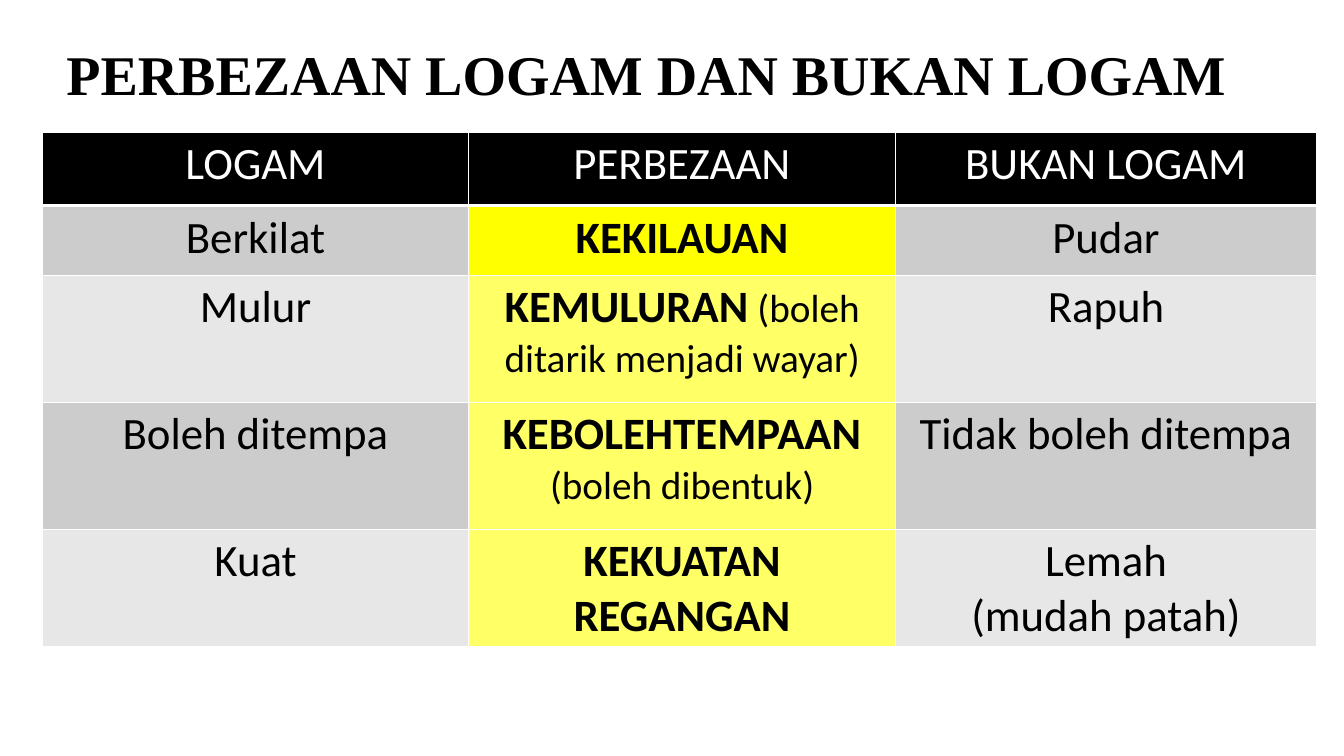
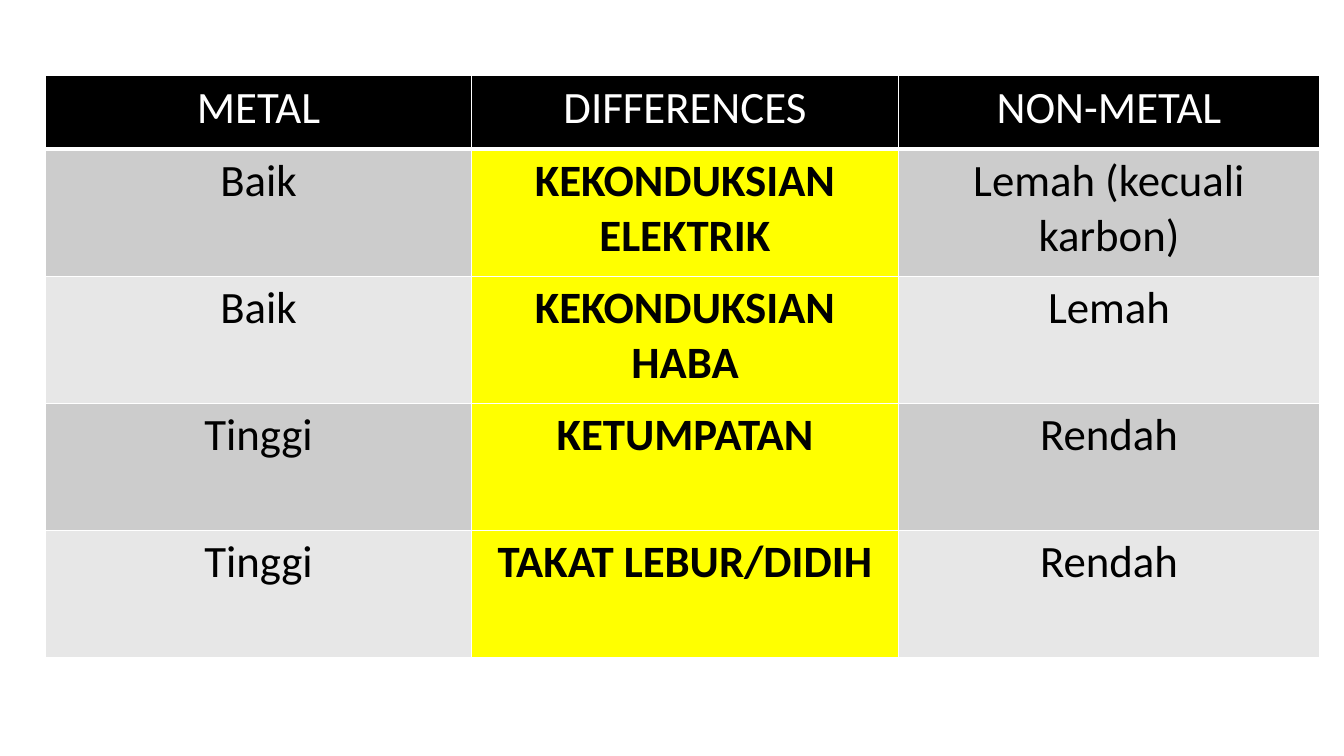
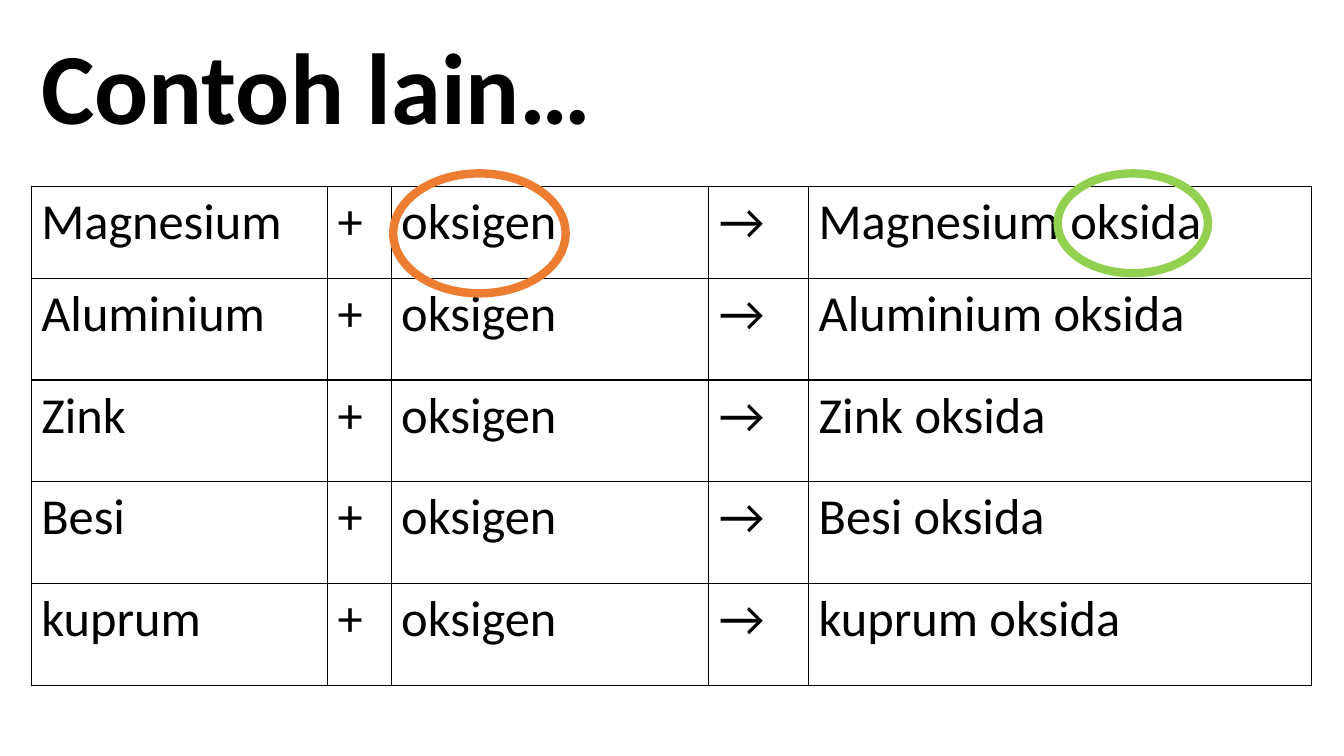
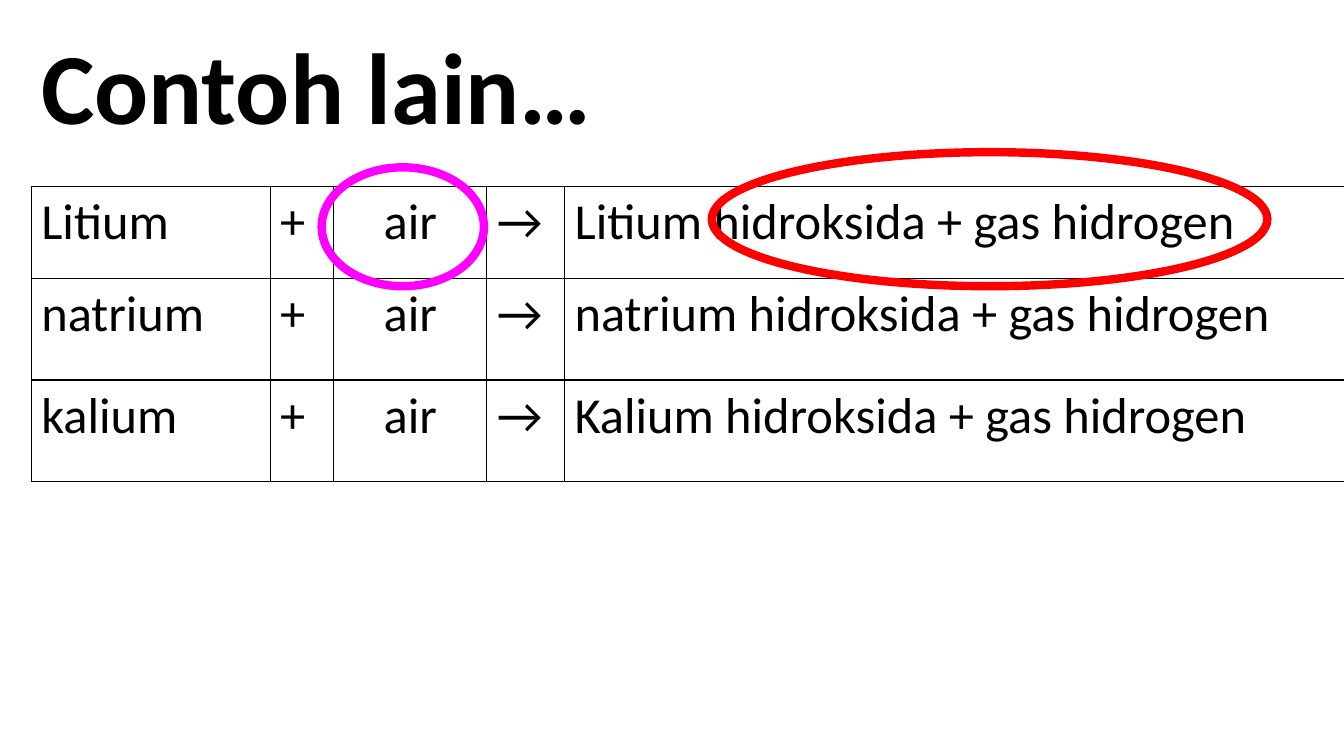
from dataclasses import dataclass

from lxml.etree import SubElement
from pptx import Presentation
from pptx.dml.color import RGBColor
from pptx.enum.shapes import MSO_SHAPE
from pptx.enum.text import MSO_AUTO_SIZE, PP_ALIGN
from pptx.oxml.ns import qn
from pptx.util import Inches, Pt


@dataclass(frozen=True)
class Theme:
    body_font: str = "Calibri"
    heading_font: str = "Times New Roman"
    black: str = "000000"
    white: str = "FFFFFF"
    bands: tuple = ("CCCCCC", "E7E7E7")
    yellow: str = "FFFF00"
    pale_yellow: str = "FFFF66"
    orange: str = "ED7D31"
    green: str = "92D050"
    red: str = "FF0000"
    magenta: str = "FF00FF"
    heading_size: int = 40
    example_title_size: int = 72
    comparison_size: int = 32
    note_size: int = 28
    equation_size: int = 36
    border_width: int = 1
    header_rule_width: int = 3
    ring_width: int = 6


class Deck:
    def __init__(self, theme):
        self.theme = theme
        self.presentation = Presentation()
        self.presentation.slide_width = Inches(13.33)
        self.presentation.slide_height = Inches(7.5)
        self.slide = None

    def new_slide(self):
        self.slide = self.presentation.slides.add_slide(self.presentation.slide_layouts[6])

    def format_run(self, run, size, color, bold=False, font=None):
        run.font.name = font or self.theme.body_font
        run.font.size = Pt(size)
        run.font.bold = bold
        run.font.color.rgb = RGBColor.from_string(color)

    def title(self, text, position, size, font=None):
        shape = self.slide.shapes.add_textbox(*map(Inches, position))
        text_frame = shape.text_frame
        text_frame.text = text
        text_frame.word_wrap = False
        text_frame.auto_size = MSO_AUTO_SIZE.SHAPE_TO_FIT_TEXT
        self.format_run(text_frame.paragraphs[0].runs[0], size, self.theme.black, True, font)

    def table(self, left, top, widths, heights):
        frame = self.slide.shapes.add_table(
            len(heights), len(widths), Inches(left), Inches(top),
            Inches(sum(widths)), Inches(sum(heights)))
        table = frame.table
        table.first_row = False
        table.horz_banding = False
        for column, width in zip(table.columns, widths):
            column.width = Inches(width)
        for row, height in zip(table.rows, heights):
            row.height = Inches(height)
        return table

    def cell(self, cell, text, size, color, border, fill=None, bold=False,
             alignment=PP_ALIGN.LEFT, bottom_width=None):
        properties = cell._tc.get_or_add_tcPr()
        for side in ("lnL", "lnR", "lnT", "lnB"):
            width = bottom_width if side == "lnB" and bottom_width else self.theme.border_width
            line = SubElement(properties, qn(f"a:{side}"), w=str(Pt(width)))
            SubElement(SubElement(line, qn("a:solidFill")), qn("a:srgbClr"), val=border)
        if fill:
            cell.fill.solid()
            cell.fill.fore_color.rgb = RGBColor.from_string(fill)
        else:
            cell.fill.background()
        cell.text_frame.text = text
        for paragraph in cell.text_frame.paragraphs:
            paragraph.alignment = alignment
            for run in paragraph.runs:
                self.format_run(run, size, color, bold)

    def comparison(self, left, top, heights, header, rows, key_fills):
        theme = self.theme
        table = self.table(left, top, (4.23, 4.23, 4.18), heights)
        shared = dict(size=theme.comparison_size, border=theme.white, alignment=PP_ALIGN.CENTER)
        for column, text in enumerate(header):
            self.cell(table.cell(0, column), text, color=theme.white, fill=theme.black,
                      bottom_width=theme.header_rule_width, **shared)
        for index, (metal, key, non_metal, *note) in enumerate(rows):
            band = theme.bands[index % 2]
            fills = (band, key_fills[index], band)
            for column, text in enumerate((metal, key, non_metal)):
                self.cell(table.cell(index + 1, column), text, color=theme.black,
                          fill=fills[column], bold=column == 1, **shared)
            for text in note:
                run = table.cell(index + 1, 1).text_frame.paragraphs[0].add_run()
                run.text = f" {text}"
                self.format_run(run, theme.note_size, theme.black)

    def equations(self, widths, rows, reactant_alignment=PP_ALIGN.LEFT):
        theme = self.theme
        self.title("Contoh lain…", (0.31, 0.19, 5.72, 1.31), theme.example_title_size)
        heights = [0.91] + [1.01] * (len(rows) - 1)
        table = self.table(0.31, 1.85, widths, heights)
        for index, (element, reactant, product) in enumerate(rows):
            for column, text in enumerate((element, "+", reactant, "→", product)):
                alignment = reactant_alignment if column == 2 else PP_ALIGN.LEFT
                self.cell(table.cell(index, column), text, theme.equation_size,
                          theme.black, theme.black, alignment=alignment)

    def ring(self, position, color):
        shape = self.slide.shapes.add_shape(MSO_SHAPE.OVAL, *map(Inches, position))
        shape.shadow.inherit = False
        shape.fill.background()
        shape.line.color.rgb = RGBColor.from_string(color)
        shape.line.width = Pt(self.theme.ring_width)


def main():
    theme = Theme()
    deck = Deck(theme)

    deck.new_slide()
    deck.title("PERBEZAAN LOGAM DAN BUKAN LOGAM", (0.56, 0.34, 12.21, 0.77),
               theme.heading_size, theme.heading_font)
    deck.comparison(
        0.42, 1.31, (0.73, 0.69, 1.26, 1.26, 1.16),
        ("LOGAM", "PERBEZAAN", "BUKAN LOGAM"),
        (("Berkilat", "KEKILAUAN", "Pudar"),
         ("Mulur", "KEMULURAN", "Rapuh", "(boleh ditarik menjadi wayar)"),
         ("Boleh ditempa", "KEBOLEHTEMPAAN", "Tidak boleh ditempa", "(boleh dibentuk)"),
         ("Kuat", "KEKUATAN REGANGAN", "Lemah\n(mudah patah)")),
        [theme.yellow] + [theme.pale_yellow] * 3)

    deck.new_slide()
    deck.comparison(
        0.45, 0.75, [0.73] + [1.26] * 4,
        ("METAL", "DIFFERENCES", "NON-METAL"),
        (("Baik", "KEKONDUKSIAN ELEKTRIK", "Lemah (kecuali karbon)"),
         ("Baik", "KEKONDUKSIAN HABA", "Lemah"),
         ("Tinggi", "KETUMPATAN", "Rendah"),
         ("Tinggi", "TAKAT LEBUR/DIDIH", "Rendah")),
        [theme.yellow] * 4)

    deck.new_slide()
    metals = ("Magnesium", "Aluminium", "Zink", "Besi", "kuprum")
    deck.equations((2.94, 0.63, 3.15, 0.99, 4.99),
                   [(metal, "oksigen", f"{metal} oksida") for metal in metals])
    deck.ring((10.49, 1.72, 1.49, 0.99), theme.green)
    deck.ring((3.9, 1.72, 1.71, 1.19), theme.orange)

    deck.new_slide()
    alkali_metals = (("Litium", "Litium"), ("natrium", "natrium"), ("kalium", "Kalium"))
    deck.equations((2.37, 0.63, 1.52, 0.77, 7.74),
                   [(metal, "air", f"{product} hidroksida + gas hidrogen")
                    for metal, product in alkali_metals],
                   PP_ALIGN.CENTER)
    deck.ring((7.06, 1.51, 5.51, 1.33), theme.red)
    deck.ring((3.19, 1.66, 1.61, 1.18), theme.magenta)

    deck.presentation.save("out.pptx")


if __name__ == "__main__":
    main()
